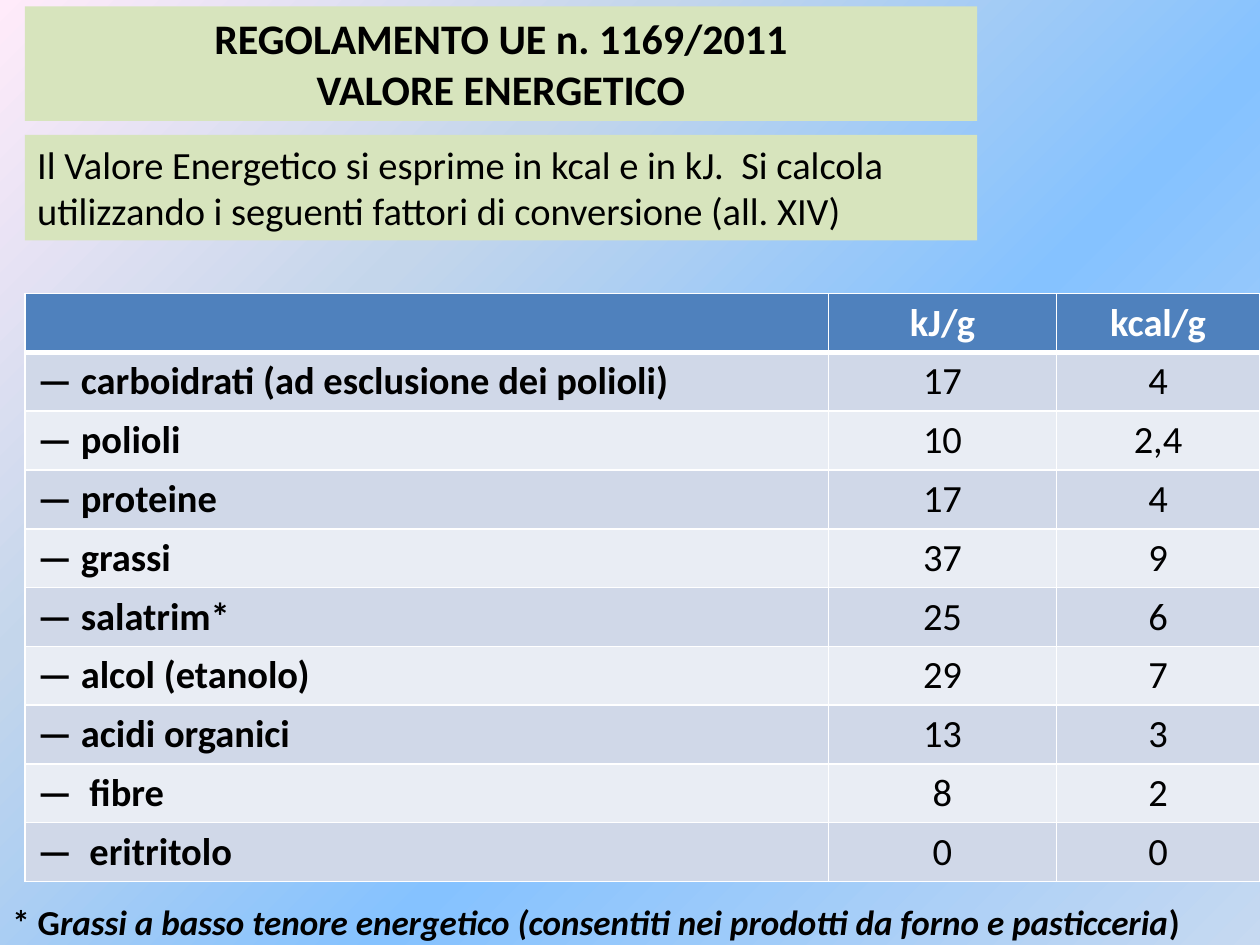
from dataclasses import dataclass

from pptx import Presentation
from pptx.dml.color import RGBColor
from pptx.enum.text import MSO_ANCHOR, MSO_AUTO_SIZE, PP_ALIGN
from pptx.oxml import parse_xml
from pptx.oxml.ns import nsdecls
from pptx.util import Cm, Pt


@dataclass(frozen=True)
class Theme:
    font: str = "Calibri"
    title_size: int = 24
    body_size: int = 22
    note_size: int = 20
    black: str = "000000"
    white: str = "FFFFFF"
    panel: str = "D7E4BD"
    header: str = "4F81BD"
    bands: tuple = ("D0D8E8", "E9EDF4")
    # position in percent, colour, opacity in percent
    backdrop: tuple = ((0, "C6D9F1", 36), (40, "85C2FF", 100),
                       (70, "C4D6EB", 100), (100, "FFEBFA", 100))


THEME = Theme()

HEADINGS = ("", "kJ/g", "kcal/g")
FACTORS = (
    ("— carboidrati (ad esclusione dei polioli)", "17", "4"),
    ("— polioli", "10", "2,4"),
    ("— proteine", "17", "4"),
    ("— grassi", "37", "9"),
    ("— salatrim*", "25", "6"),
    ("— alcol (etanolo)", "29", "7"),
    ("— acidi organici", "13", "3"),
    ("—  fibre", "8", "2"),
    ("—  eritritolo", "0", "0"),
)
COLUMN_WIDTHS = (Cm(16.2), Cm(4.6), Cm(4.09))
ROW_HEIGHT = Cm(1.18)
PANEL_LEFT, PANEL_WIDTH = Cm(0.5), Cm(19.2)


def set_backdrop(slide):
    """Fill the background with a gradient spreading from the lower right."""
    stops = "".join(
        f'<a:gs pos="{position * 1000}"><a:srgbClr val="{color}">'
        f'<a:alpha val="{opacity * 1000}"/></a:srgbClr></a:gs>'
        for position, color, opacity in THEME.backdrop)
    background = parse_xml(
        f'<p:bg {nsdecls("p", "a")}><p:bgPr><a:gradFill rotWithShape="1">'
        f'<a:gsLst>{stops}</a:gsLst><a:path path="circle">'
        '<a:fillToRect l="100000" t="100000"/></a:path></a:gradFill>'
        '<a:effectLst/></p:bgPr></p:bg>')
    slide.element.cSld.insert(0, background)


def fill_solid(target, color):
    target.fill.solid()
    target.fill.fore_color.rgb = RGBColor.from_string(color)


def format_paragraph(para, size, color=THEME.black, bold=False,
                     align=PP_ALIGN.LEFT):
    para.alignment = align
    para.font.name = THEME.font
    para.font.size = Pt(size)
    para.font.bold = bold
    para.font.color.rgb = RGBColor.from_string(color)


def place(box, left, top, width, height):
    box.left, box.top, box.width, box.height = left, top, width, height


def format_panel(box, top, height, text, **style):
    place(box, PANEL_LEFT, top, PANEL_WIDTH, height)
    fill_solid(box, THEME.panel)
    frame = box.text_frame
    frame.word_wrap = True
    frame.auto_size = MSO_AUTO_SIZE.NONE
    frame.vertical_anchor = MSO_ANCHOR.TOP
    frame.text = text
    for para in frame.paragraphs:
        format_paragraph(para, **style)


def set_borders(cell, bottom_width):
    properties = cell._tc.get_or_add_tcPr()
    sides = (("lnL", 1), ("lnR", 1), ("lnT", 1), ("lnB", bottom_width))
    for index, (side, width) in enumerate(sides):
        properties.insert(index, parse_xml(
            f'<a:{side} {nsdecls("a")} w="{Pt(width)}"><a:solidFill>'
            f'<a:srgbClr val="{THEME.white}"/></a:solidFill></a:{side}>'))


def format_cell(cell, text, row_index, column_index):
    is_header = row_index == 0
    cell.text = text
    cell.margin_top = cell.margin_bottom = Cm(0.12)
    fill_solid(cell, THEME.header if is_header
               else THEME.bands[(row_index - 1) % 2])
    set_borders(cell, 3 if is_header else 1)
    format_paragraph(
        cell.text_frame.paragraphs[0], THEME.body_size,
        color=THEME.white if is_header else THEME.black,
        bold=is_header or column_index == 0,
        align=PP_ALIGN.CENTER if column_index else PP_ALIGN.LEFT)


def add_factor_table(slide):
    rows = (HEADINGS, *FACTORS)
    table = slide.shapes.add_table(
        len(rows), len(HEADINGS), PANEL_LEFT, Cm(5.92),
        sum(COLUMN_WIDTHS), ROW_HEIGHT * len(rows)).table
    table.horz_banding = False
    for column, width in zip(table.columns, COLUMN_WIDTHS):
        column.width = width
    for row_index, values in enumerate(rows):
        table.rows[row_index].height = ROW_HEIGHT
        for column_index, text in enumerate(values):
            format_cell(table.cell(row_index, column_index), text,
                        row_index, column_index)


def add_footnote(slide):
    box = slide.shapes.add_textbox(Cm(0), Cm(18.03), Cm(24.16), Cm(1.11))
    box.text_frame.word_wrap = False
    para = box.text_frame.paragraphs[0]
    format_paragraph(para, THEME.note_size, bold=True)
    for text, italic in (
            ("* G", False),
            ("rassi a basso tenore energetico "
             "(consentiti nei prodotti da forno e pasticceria", True),
            (")", False)):
        span = para.add_run()
        span.text = text
        span.font.italic = italic


def main():
    deck = Presentation()
    deck.slide_width, deck.slide_height = Cm(25.4), Cm(19.05)
    slide = deck.slides.add_slide(deck.slide_layouts[5])
    set_backdrop(slide)
    format_panel(slide.shapes.title, Cm(0.13), Cm(2.31),
                 "REGOLAMENTO UE n. 1169/2011\nVALORE ENERGETICO",
                 size=THEME.title_size, bold=True, align=PP_ALIGN.CENTER)
    intro = slide.shapes.add_textbox(PANEL_LEFT, Cm(2.72), PANEL_WIDTH, Cm(2.13))
    format_panel(intro, Cm(2.72), Cm(2.13),
                 "Il Valore Energetico si esprime in kcal e in kJ.  Si calcola "
                 "utilizzando i seguenti fattori di conversione (all. XIV)",
                 size=THEME.body_size)
    add_factor_table(slide)
    add_footnote(slide)
    deck.save("out.pptx")


if __name__ == "__main__":
    main()
